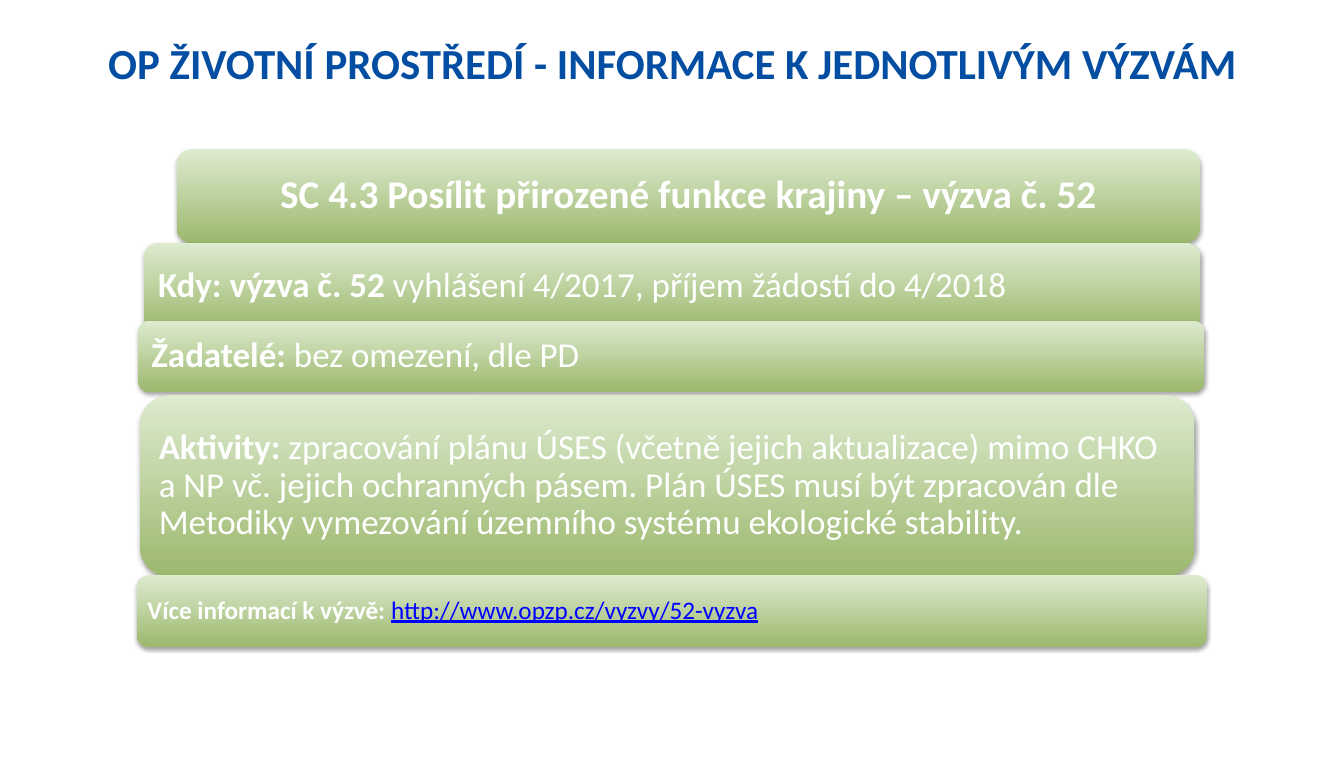
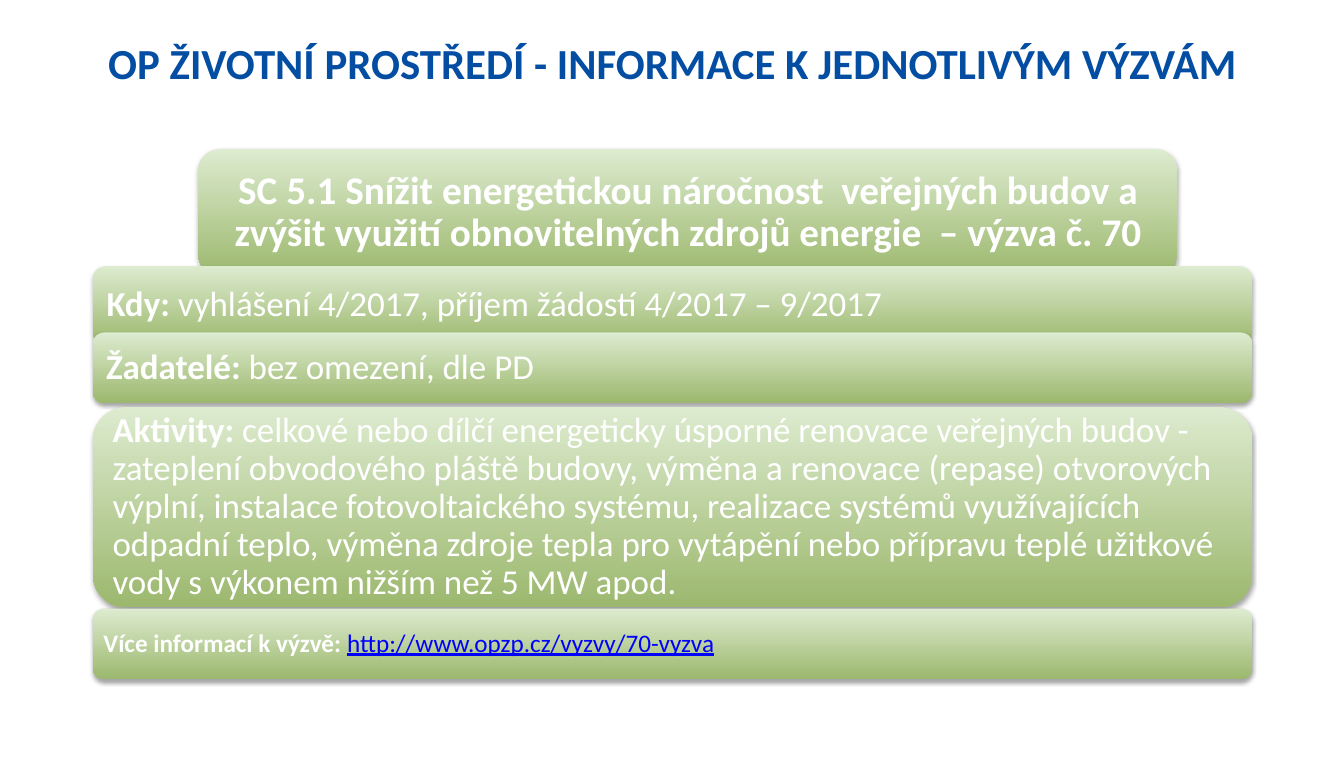
from lxml.etree import SubElement
from pptx import Presentation
from pptx.dml.color import RGBColor
from pptx.enum.shapes import MSO_SHAPE
from pptx.enum.text import MSO_ANCHOR, PP_ALIGN
from pptx.oxml.ns import qn
from pptx.util import Cm, Pt

BLUE = RGBColor(0x03, 0x4E, 0xA2)
LINK = RGBColor(0x00, 0x00, 0xFF)
WHITE = RGBColor(0xFF, 0xFF, 0xFF)
LIGHT_GREEN = RGBColor(0xDD, 0xEB, 0xCF)
GREEN = RGBColor(0x9C, 0xB8, 0x6E)

TITLE = "OP ŽIVOTNÍ PROSTŘEDÍ - INFORMACE K JEDNOTLIVÝM VÝZVÁM"
HEADING = {"size": 28, "inset": 0.3, "align": PP_ALIGN.CENTER}
DETAIL = {"size": 25, "inset": 0.25, "align": PP_ALIGN.LEFT}
MORE = {"size": 18, "inset": 0.18, "align": PP_ALIGN.LEFT}
STYLES = [HEADING, DETAIL, DETAIL, DETAIL, MORE]

CALLS = [
    [
        ((4.45, 3.76, 25.78, 2.36), "SC 4.3 Posílit přirozené funkce krajiny – výzva č. 52", ""),
        ((3.63, 6.12, 26.62, 2.21), "Kdy: výzva č. 52 ", "vyhlášení 4/2017, příjem žádostí do 4/2018"),
        ((3.48, 8.08, 26.87, 1.8), "Žadatelé: ", "bez omezení, dle PD"),
        ((3.53, 9.96, 26.57, 4.57), "Aktivity: ",
         "zpracování plánu ÚSES (včetně jejich aktualizace) mimo CHKO a NP vč. jejich "
         "ochranných pásem. Plán ÚSES musí být zpracován dle Metodiky vymezování "
         "územního systému ekologické stability."),
        ((3.45, 14.5, 26.97, 1.8), "Více informací k výzvě: ", "http://www.opzp.cz/vyzvy/52-vyzva"),
    ],
    [
        ((5, 3.76, 24.66, 3.2),
         "SC 5.1 Snížit energetickou náročnost  veřejných budov a zvýšit využití "
         "obnovitelných zdrojů energie  – výzva č. 70", ""),
        ((2.34, 6.71, 29.21, 1.96), "Kdy: ", "vyhlášení 4/2017, příjem žádostí 4/2017 – 9/2017"),
        ((2.34, 8.38, 29.21, 1.78), "Žadatelé: ", "bez omezení, dle PD"),
        ((2.34, 10.26, 29.21, 5.05), "Aktivity: ",
         "celkové nebo dílčí energeticky úsporné renovace veřejných budov - zateplení "
         "obvodového pláště budovy, výměna a renovace (repase) otvorových výplní, "
         "instalace fotovoltaického systému, realizace systémů využívajících odpadní "
         "teplo, výměna zdroje tepla pro vytápění nebo přípravu teplé užitkové vody "
         "s výkonem nižším než 5 MW apod."),
        ((2.34, 15.34, 29.21, 1.78), "Více informací k výzvě: ", "http://www.opzp.cz/vyzvy/70-vyzva"),
    ],
]


def add_span(para, text, color, **formats):
    span = para.add_run()
    span.text = text
    span.font.name = "Calibri"
    span.font.color.rgb = color
    for name, value in formats.items():
        setattr(span.font, name, value)


def style_bar(bar):
    bar.line.fill.background()
    bar.fill.gradient()
    bar.fill.gradient_angle = 270
    for stop, color in zip(bar.fill.gradient_stops, (LIGHT_GREEN, GREEN)):
        stop.color.rgb = color
    bar.shadow.inherit = False
    effects = bar._element.spPr.find(qn("a:effectLst"))
    shadow = SubElement(effects, qn("a:outerShdw"), blurRad="40000", dist="23000",
                        dir="5400000", rotWithShape="0")
    black = SubElement(shadow, qn("a:srgbClr"), val="000000")
    SubElement(black, qn("a:alpha"), val="35000")


deck = Presentation()
deck.slide_width = Cm(33.86)
deck.slide_height = Cm(19.51)

for bars in CALLS:
    page = deck.slides.add_slide(deck.slide_layouts[6])

    for (place, label, detail), style in zip(bars, STYLES):
        bar = page.shapes.add_shape(MSO_SHAPE.ROUNDED_RECTANGLE, *map(Cm, place))
        style_bar(bar)
        frame = bar.text_frame
        frame.word_wrap = True
        frame.vertical_anchor = MSO_ANCHOR.MIDDLE
        for side in ("left", "top", "right", "bottom"):
            setattr(frame, f"margin_{side}", Cm(style["inset"]))
        para = frame.paragraphs[0]
        para.alignment = style["align"]
        para.line_spacing = 0.9
        size = Pt(style["size"])
        add_span(para, label, WHITE, size=size, bold=True)
        if detail:
            is_link = style is MORE
            add_span(para, detail, LINK if is_link else WHITE,
                     size=size, bold=False, underline=is_link)

    box = page.shapes.add_textbox(Cm(1.7), Cm(0.79), Cm(30.48), Cm(2.57))
    box.text_frame.word_wrap = True
    para = box.text_frame.paragraphs[0]
    para.alignment = PP_ALIGN.CENTER
    add_span(para, TITLE, BLUE, size=Pt(30.6), bold=True)

deck.save("out.pptx")
